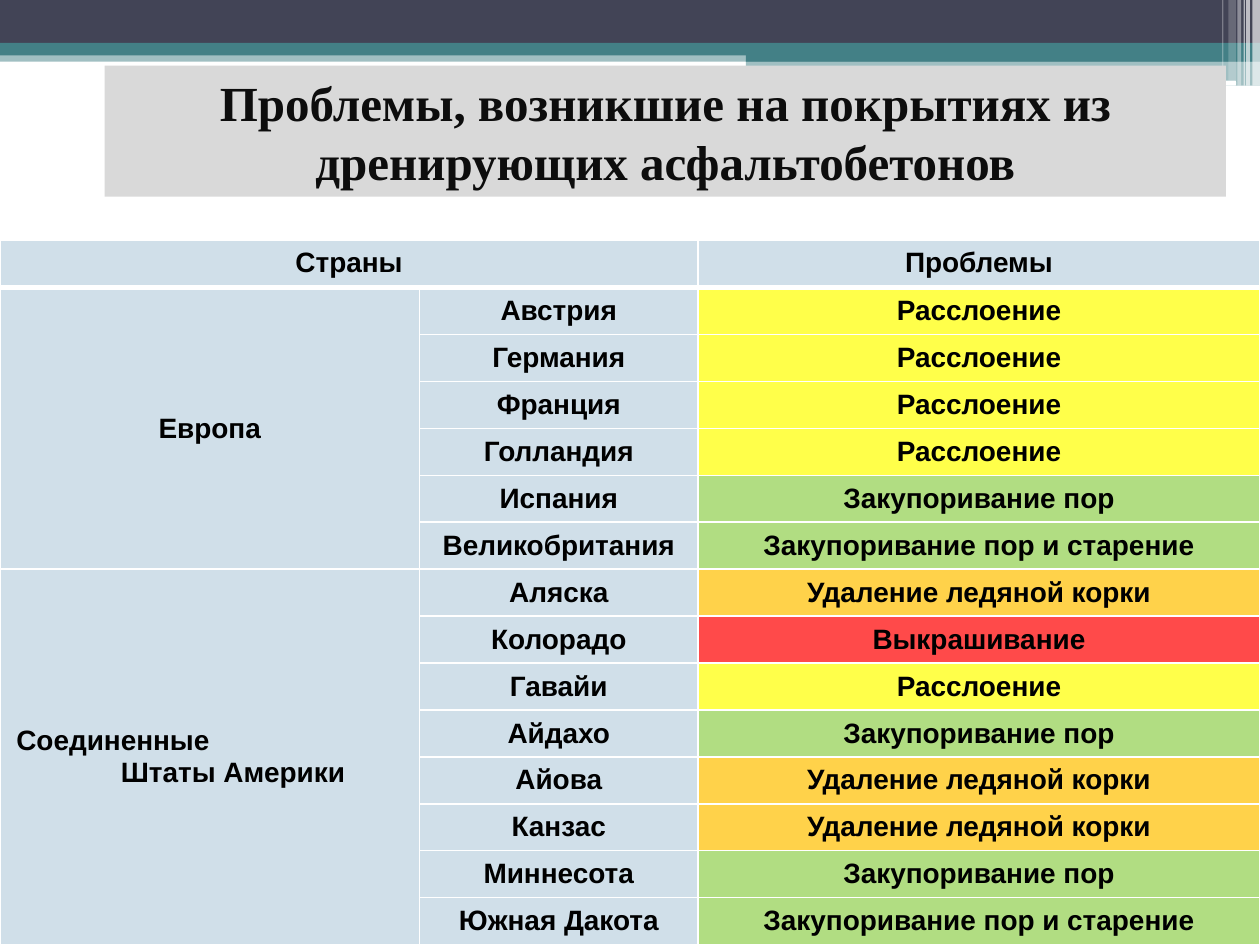
"""Build a slide listing problems found on draining asphalt pavements."""
import pptx
import pptx.dml.color
import pptx.enum.shapes
import pptx.enum.text
import pptx.oxml.ns
import pptx.util
from lxml import etree
from pptx.util import Inches

ALIGN = pptx.enum.text.PP_ALIGN
ANCHOR = pptx.enum.text.MSO_ANCHOR
SHAPE = pptx.enum.shapes.MSO_SHAPE
COLORS = {
    "navy": "424456", "teal": "438086", "white": "FFFFFF", "gray": "D9D9D9",
    "ink": "0D0D0D", "black": "000000", "blue": "BED3E1", "yellow": "FFFF00",
    "green": "92D050", "orange": "FFC000", "red": "FF0000",
}
CELL_OPACITY = 71
BARS = [
    (0, 0.4, 10, 0.09, "teal", 50),
    (0, 0, 10, 0.34, "navy", 100),
    (0, 0.34, 10, 0.1, "teal", 100),
    (5.92, 0.39, 4.08, 0.1, "teal", 100),
    (5.92, 0.48, 4.08, 0.2, "teal", 50),
]
STRIPES = [
    (9.94, 0, 0.06, 0.68, "white", 65),
    (9.89, 0, 0.03, 0.68, "white", 65),
    (9.87, 0, 0.01, 0.68, "white", 60),
    (9.82, 0, 0.03, 0.68, "white", 40),
    (9.75, 0, 0.06, 0.64, "white", 20),
    (9.7, 0, 0.01, 0.64, "white", 30),
]
TITLE = "Проблемы, возникшие на покрытиях из дренирующих асфальтобетонов"
PEELING = ("Расслоение", "yellow")
CLOGGING = ("Закупоривание пор", "green")
AGING = ("Закупоривание пор и старение", "green")
ICE = ("Удаление ледяной корки", "orange")
RAVELING = ("Выкрашивание", "red")
EUROPE = [
    ("Австрия", PEELING), ("Германия", PEELING), ("Франция", PEELING),
    ("Голландия", PEELING), ("Испания", CLOGGING), ("Великобритания", AGING),
]
STATES = [
    ("Аляска", ICE), ("Колорадо", RAVELING), ("Гавайи", PEELING),
    ("Айдахо", CLOGGING), ("Айова", ICE), ("Канзас", ICE),
    ("Миннесота", CLOGGING), ("Южная Дакота", AGING),
]
COLUMN_WIDTHS = [3.33, 2.21, 4.46]
TABLE_TOP, TABLE_HEIGHT = 1.91, 5.59


def fill_color(fill, color, opacity=100):
    """Apply a solid color with an opacity in percent."""
    fill.solid()
    fill.fore_color.rgb = pptx.dml.color.RGBColor.from_string(COLORS[color])
    if opacity < 100:
        color_element = fill._xPr.find(".//" + pptx.oxml.ns.qn("a:srgbClr"))
        alpha = etree.SubElement(color_element, pptx.oxml.ns.qn("a:alpha"))
        alpha.set("val", str(opacity * 1000))


def write_text(paragraph, text, font="Arial", size=16, color="black",
               align=ALIGN.CENTER, indent=0):
    """Write bold text into a paragraph with the given format."""
    if indent:
        paragraph._p.get_or_add_pPr().set("marL", str(Inches(indent)))
    paragraph.alignment = align
    run = paragraph.add_run()
    run.text = text
    run.font.name = font
    run.font.size = pptx.util.Pt(size)
    run.font.bold = True
    run.font.color.rgb = pptx.dml.color.RGBColor.from_string(COLORS[color])


def add_bar(slide, left, top, width, height, color, opacity=100,
            preset=SHAPE.RECTANGLE):
    """Add a flat decorative bar."""
    shape = slide.shapes.add_shape(
        preset, Inches(left), Inches(top), Inches(width), Inches(height))
    shape.shadow.inherit = False
    shape.line.fill.background()
    fill_color(shape.fill, color, opacity)


def add_title(slide):
    """Place the title placeholder above the decoration."""
    title = slide.shapes.title
    slide.shapes._spTree.append(title._element)
    title.left, title.top = Inches(0.83), Inches(0.52)
    title.width, title.height = Inches(8.9), Inches(1.04)
    fill_color(title.fill, "gray")
    frame = title.text_frame
    frame.word_wrap = True
    frame.auto_size = pptx.enum.text.MSO_AUTO_SIZE.NONE
    frame.vertical_anchor = ANCHOR.MIDDLE
    write_text(frame.paragraphs[0], TITLE, font="Times New Roman", size=28,
               color="ink")


def set_borders(cell, top=1, bottom=1):
    """Draw white borders, given in points, around a cell."""
    properties = cell._tc.get_or_add_tcPr()
    widths = {"lnL": 1, "lnR": 1, "lnT": top, "lnB": bottom}
    for position, (side, width) in enumerate(widths.items()):
        line = etree.Element(pptx.oxml.ns.qn("a:" + side))
        line.set("w", str(pptx.util.Pt(width)))
        solid = etree.SubElement(line, pptx.oxml.ns.qn("a:solidFill"))
        color = etree.SubElement(solid, pptx.oxml.ns.qn("a:srgbClr"))
        color.set("val", COLORS["white"])
        properties.insert(position, line)


def fill_cell(cell, text, color="blue", anchor=ANCHOR.MIDDLE):
    """Set the text and the color of a table cell."""
    fill_color(cell.fill, color, CELL_OPACITY)
    cell.vertical_anchor = anchor
    write_text(cell.text_frame.paragraphs[0], text)


def fill_states_label(cell):
    """Write the two staggered lines of the second region's label."""
    fill_color(cell.fill, "blue", CELL_OPACITY)
    cell.vertical_anchor = ANCHOR.MIDDLE
    frame = cell.text_frame
    write_text(frame.paragraphs[0], "Соединенные", align=ALIGN.LEFT, indent=0.03)
    write_text(frame.add_paragraph(), "Штаты Америки", align=ALIGN.LEFT,
               indent=0.86)


def add_problem_table(slide):
    """Add the table of regions, places and problems."""
    places = EUROPE + STATES
    row_count = len(places) + 1
    table = slide.shapes.add_table(
        row_count, len(COLUMN_WIDTHS), 0, Inches(TABLE_TOP),
        Inches(sum(COLUMN_WIDTHS)), Inches(TABLE_HEIGHT)).table
    table.first_row = table.horz_banding = False
    for column, width in zip(table.columns, COLUMN_WIDTHS):
        column.width = Inches(width)
    for row in table.rows:
        row.height = Inches(TABLE_HEIGHT / row_count)

    states_row = len(EUROPE) + 1
    table.cell(0, 0).merge(table.cell(0, 1))
    table.cell(1, 0).merge(table.cell(states_row - 1, 0))
    table.cell(states_row, 0).merge(table.cell(row_count - 1, 0))
    fill_cell(table.cell(0, 0), "Страны", anchor=ANCHOR.TOP)
    fill_cell(table.cell(0, 2), "Проблемы", anchor=ANCHOR.TOP)
    fill_cell(table.cell(1, 0), "Европа")
    fill_states_label(table.cell(states_row, 0))
    for row_index, (place, (problem, color)) in enumerate(places, start=1):
        fill_cell(table.cell(row_index, 1), place)
        fill_cell(table.cell(row_index, 2), problem, color)
    for row_index, row in enumerate(table.rows):
        for cell in row.cells:
            set_borders(cell, top=3 if row_index == 1 else 1,
                        bottom=3 if row_index == 0 else 1)


def main():
    """Build and save the presentation."""
    presentation = pptx.Presentation()
    presentation.slide_width = Inches(10)
    presentation.slide_height = Inches(7.5)
    slide = presentation.slides.add_slide(presentation.slide_layouts[5])
    for bar in BARS:
        add_bar(slide, *bar)
    add_bar(slide, 8.06, 0.64, 1.75, 0.04, "white", preset=SHAPE.ROUNDED_RECTANGLE)
    for stripe in STRIPES:
        add_bar(slide, *stripe)
    add_title(slide)
    add_problem_table(slide)
    presentation.save("out.pptx")


if __name__ == "__main__":
    main()
